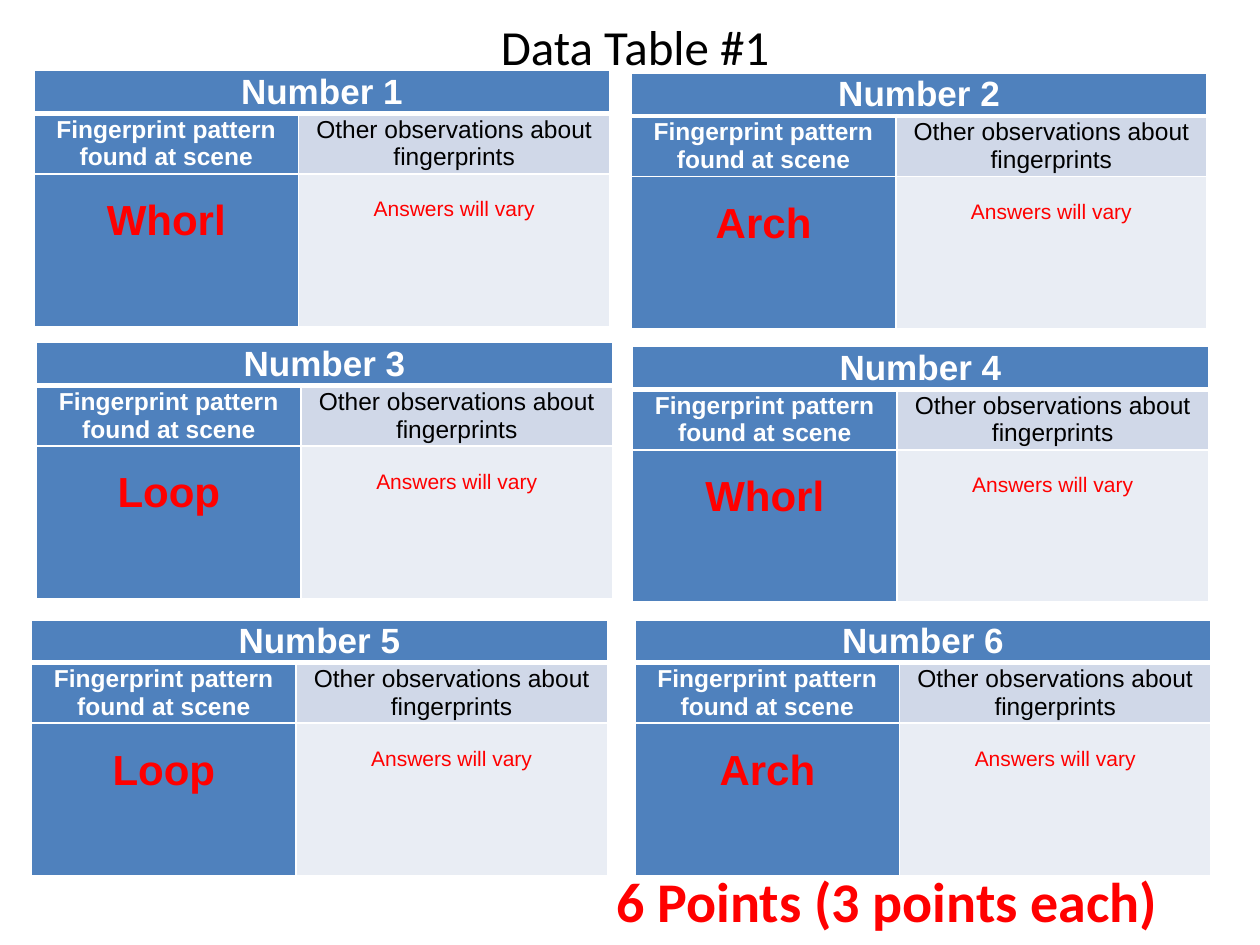
import dataclasses

import lxml.etree
import pptx
import pptx.dml.color
import pptx.enum.text
import pptx.oxml.ns
import pptx.util

ALIGN = pptx.enum.text.PP_ALIGN
ANCHOR = pptx.enum.text.MSO_ANCHOR


@dataclasses.dataclass(frozen=True)
class Theme:
    blue: str = "4F81BD"
    band: str = "D0D8E8"
    pale: str = "E9EDF4"
    white: str = "FFFFFF"
    black: str = "000000"
    red: str = "FF0000"
    head_font: str = "Calibri"
    table_font: str = "Arial"
    title: int = 28
    points: int = 32
    number: int = 20
    label: int = 14
    pattern: int = 24
    note: int = 12
    thin: int = 1
    thick: int = 3


class Sheet:
    unit = pptx.util.Inches(0.1)
    col_widths = (21, 24.7)
    row_heights = (3.4, 4.8, 12.1)

    def __init__(self, prs, theme):
        self.theme = theme
        self.s = prs.slides.add_slide(prs.slide_layouts[5])

    def grid(self, *steps):
        return [round(step * self.unit) for step in steps]

    def add_text(self, tf, text, color, align=ALIGN.CENTER, **font):
        p = tf.paragraphs[0]
        p.alignment = align
        r = p.add_run()
        r.text = text
        font["size"] = pptx.util.Pt(font["size"])
        for name, value in font.items():
            setattr(r.font, name, value)
        r.font.color.rgb = pptx.dml.color.RGBColor.from_string(color)

    def place(self, sp, box):
        for name, value in zip(("left", "top", "width", "height"), self.grid(*box)):
            setattr(sp, name, value)

    def title(self, text, box):
        t, sp = self.theme, self.s.shapes.title
        self.place(sp, box)
        tf = sp.text_frame
        tf.vertical_anchor = ANCHOR.TOP
        tf.auto_size = pptx.enum.text.MSO_AUTO_SIZE.NONE
        self.add_text(tf, text, t.black, size=t.title, name=t.head_font)

    def points(self, text, box):
        t = self.theme
        tf = self.s.shapes.add_textbox(*self.grid(*box)).text_frame
        tf.word_wrap = True
        self.add_text(tf, text, t.red, ALIGN.RIGHT,
                      size=t.points, name=t.head_font, bold=True)

    def borders(self, cell, top, bottom):
        t = self.theme
        tc_pr = cell._tc.get_or_add_tcPr()
        qn = pptx.oxml.ns.qn
        for side, width in (("L", t.thin), ("R", t.thin), ("T", top), ("B", bottom)):
            ln = lxml.etree.SubElement(tc_pr, qn(f"a:ln{side}"), w=str(pptx.util.Pt(width)))
            fill = lxml.etree.SubElement(ln, qn("a:solidFill"))
            lxml.etree.SubElement(fill, qn("a:srgbClr"), val=t.white)

    def card(self, number, pattern, left, top):
        t = self.theme
        box = (left, top, sum(self.col_widths), sum(self.row_heights))
        table = self.s.shapes.add_table(3, 2, *self.grid(*box)).table
        for column, width in zip(table.columns, self.grid(*self.col_widths)):
            column.width = width
        for row, height in zip(table.rows, self.grid(*self.row_heights)):
            row.height = height
        table.cell(0, 0).merge(table.cell(0, 1))
        rows = (
            ((f"Number {number}", t.blue, t.white, t.number, True),
             ("", t.blue, t.white, t.number, True)),
            (("Fingerprint pattern found at scene", t.blue, t.white, t.label, True),
             ("Other observations about fingerprints", t.band, t.black, t.label, False)),
            ((pattern, t.blue, t.red, t.pattern, True),
             ("Answers will vary", t.pale, t.red, t.note, False)),
        )
        for i, row in enumerate(rows):
            answer = i == 2
            side, inset = self.grid(0.7, 1.9 if answer else 0)
            layout = {
                "margin_left": side, "margin_right": side,
                "margin_top": inset, "margin_bottom": 0,
                "vertical_anchor": ANCHOR.TOP if answer else ANCHOR.MIDDLE,
            }
            for j, (text, fill, color, size, bold) in enumerate(row):
                cell = table.cell(i, j)
                for name, value in layout.items():
                    setattr(cell, name, value)
                self.borders(cell, t.thick if i == 1 else t.thin,
                             t.thick if i == 0 else t.thin)
                cell.fill.solid()
                cell.fill.fore_color.rgb = pptx.dml.color.RGBColor.from_string(fill)
                if text:
                    self.add_text(cell.text_frame, text, color,
                                  size=size, name=t.table_font, bold=bold)


def main():
    prs = pptx.Presentation()
    prs.slide_width = pptx.util.Inches(10)
    prs.slide_height = pptx.util.Inches(7.5)
    sheet = Sheet(prs, Theme())
    sheet.title("Data Table #1", (2.9, 0.8, 95, 15.1))
    sheet.points("6 Points (3 points each)", (29.2, 68.3, 63.7, 6.4))
    cards = (
        (1, "Whorl", 2.7, 5.6),
        (3, "Loop", 2.9, 27.2),
        (5, "Loop", 2.5, 49.2),
        (6, "Arch", 50.4, 49.2),
        (4, "Whorl", 50.2, 27.5),
        (2, "Arch", 50.1, 5.8),
    )
    for card in cards:
        sheet.card(*card)
    prs.save("out.pptx")


if __name__ == "__main__":
    main()
